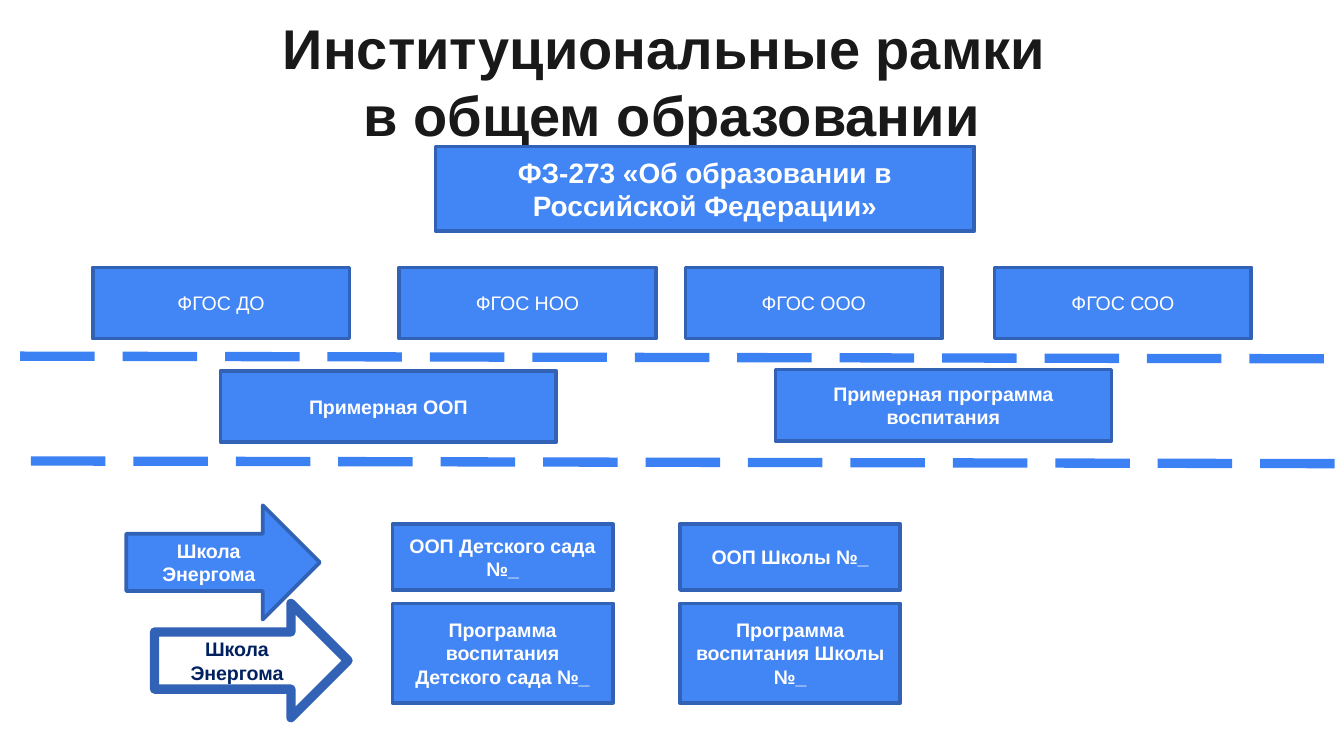
import pptx
import pptx.dml.color
import pptx.enum.dml
import pptx.enum.shapes
import pptx.enum.text
import pptx.oxml.ns
import pptx.util
from lxml import etree
from pptx.util import Inches

SHAPES = pptx.enum.shapes.MSO_SHAPE
ANCHOR = pptx.enum.text.MSO_ANCHOR


def color(value):
    return pptx.dml.color.RGBColor.from_string(value)


class SlideBuilder:
    font = "Arial"
    fill = "4285F4"
    border = "3162B5"
    divider_color = "3C81F3"
    white = "FFFFFF"

    def __init__(self, slide):
        self.slide = slide

    def format_text(self, frame, size, text_color, bold):
        for para in frame.paragraphs:
            para.alignment = pptx.enum.text.PP_ALIGN.CENTER
            for span in para.runs:
                span.font.name = self.font
                span.font.size = pptx.util.Pt(size)
                span.font.bold = bold
                span.font.color.rgb = color(text_color)

    def title(self, text, left, top, width, height):
        box = self.slide.shapes.title
        box.left, box.top = Inches(left), Inches(top)
        box.width, box.height = Inches(width), Inches(height)
        frame = box.text_frame
        frame.text = text
        frame.word_wrap = True
        frame.auto_size = pptx.enum.text.MSO_AUTO_SIZE.NONE
        frame.vertical_anchor = ANCHOR.TOP
        frame.margin_left = frame.margin_right = Inches(0.1)
        frame.margin_top = frame.margin_bottom = Inches(0.1)
        frame.paragraphs[0].line_spacing = 1.0
        self.format_text(frame, 30, "191919", True)

    def block(self, text, left, top, width, height, size=10.5, bold=True,
              kind=SHAPES.RECTANGLE, filled=True, line_width=2, text_color=white):
        box = self.slide.shapes.add_shape(
            kind, Inches(left), Inches(top), Inches(width), Inches(height))
        box.shadow.inherit = False
        if filled:
            box.fill.solid()
            box.fill.fore_color.rgb = color(self.fill)
        else:
            box.fill.background()
        box.line.color.rgb = color(self.border)
        box.line.width = pptx.util.Pt(line_width)
        frame = box.text_frame
        frame.text = text
        frame.word_wrap = True
        frame.vertical_anchor = ANCHOR.MIDDLE
        self.format_text(frame, size, text_color, bold)

    def divider(self, left, top):
        line = self.slide.shapes.add_connector(
            pptx.enum.shapes.MSO_CONNECTOR.STRAIGHT,
            Inches(left), Inches(top), Inches(left + 9.75), Inches(top + 0.02))
        line.line.color.rgb = color(self.divider_color)
        line.line.width = pptx.util.Pt(5)
        line.line.dash_style = pptx.enum.dml.MSO_LINE.LONG_DASH
        properties = line._element.spPr
        etree.SubElement(properties, pptx.oxml.ns.qn("a:effectLst"))


def main():
    deck = pptx.Presentation()
    deck.slide_width = Inches(10)
    deck.slide_height = deck.slide_width * 9 // 16
    builder = SlideBuilder(deck.slides.add_slide(deck.slide_layouts[5]))

    builder.title("Институциональные рамки \vв общем образовании", 0.69, 0, 8.62, 1.09)
    builder.block("ФЗ-273 «Об образовании в Российской Федерации»",
                  3.24, 1.09, 4.01, 0.63, size=15)

    for level, left in (("ДО", 0.69), ("НОО", 2.97), ("ООО", 5.1), ("СОО", 7.4)):
        builder.block(f"ФГОС {level}", left, 1.99, 1.91, 0.53, bold=False)

    builder.block("Примерная ООП", 1.64, 2.76, 2.5, 0.53)
    builder.block("Примерная программа воспитания", 5.77, 2.75, 2.5, 0.53)
    builder.divider(0.15, 2.65)
    builder.divider(0.23, 3.43)

    for institution, left in (("Детского сада", 2.92), ("Школы", 5.06)):
        builder.block(f"ООП {institution} №_", left, 3.9, 1.64, 0.49)
        builder.block(f"Программа воспитания {institution} №_", left, 4.49, 1.64, 0.74)

    school = "Школа Энергома"
    builder.block(school, 0.94, 3.76, 1.44, 0.85, kind=SHAPES.RIGHT_ARROW)
    builder.block(school, 1.15, 4.49, 1.44, 0.85, kind=SHAPES.RIGHT_ARROW,
                  filled=False, line_width=5, text_color="002060")

    deck.save("out.pptx")


if __name__ == "__main__":
    main()
